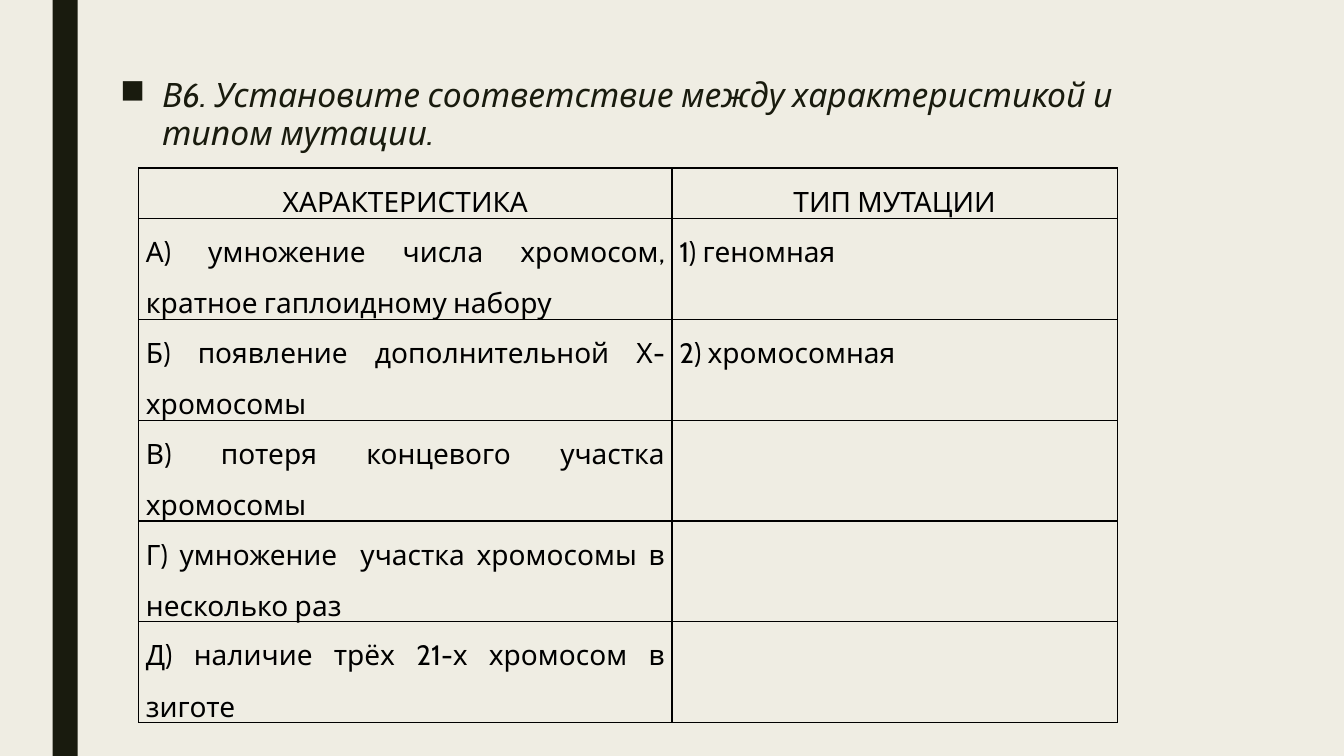
from dataclasses import dataclass

from lxml.etree import SubElement
from pptx import Presentation
from pptx.dml.color import RGBColor as RGB
from pptx.enum.shapes import MSO_SHAPE as SHAPE
from pptx.enum.text import PP_ALIGN as ALIGN
from pptx.oxml.ns import qn
from pptx.util import Pt

EMU_PER_PX = 9525


@dataclass(frozen=True)
class Theme:
    font: str = "Cabin"
    background: str = "EFEDE3"
    dark: str = "191B0E"
    black: str = "000000"
    task_size: int = 24
    table_size: int = 20
    border: int = 1


THEME = Theme()

TASK = "В6. Установите соответствие между характеристикой и типом мутации."
ROWS = [
    ("ХАРАКТЕРИСТИКА", "ТИП МУТАЦИИ"),
    ("А) умножение числа хромосом, кратное гаплоидному набору", "1) геномная"),
    ("Б) появление дополнительной Х-хромосомы", "2) хромосомная"),
    ("В) потеря концевого участка хромосомы", ""),
    ("Г) умножение  участка хромосомы в несколько раз", ""),
    ("Д) наличие трёх 21-х хромосом в зиготе", ""),
]
COLUMN_WIDTHS = [508, 424]
ROW_HEIGHTS = [41, 88, 88, 88, 88, 96]


def px(n):
    return n * EMU_PER_PX


def box_px(box):
    return [px(n) for n in box]


def write(tf, text, size, color, align=ALIGN.LEFT, spacing=1.0, after=0,
          italic=False, bullet=None, indent=0):
    p = tf.paragraphs[0]
    p.alignment, p.line_spacing, p.space_after = align, spacing, Pt(after)
    p.space_before = Pt(0)
    if bullet:
        pPr = p._p.get_or_add_pPr()
        pPr.set("marL", str(px(indent)))
        pPr.set("indent", str(-px(indent)))
        SubElement(pPr, qn("a:buChar")).set("char", bullet)
    r = p.add_run()
    r.text = text
    f = r.font
    f.name, f.size, f.bold, f.italic = THEME.font, Pt(size), False, italic
    f.color.rgb = RGB.from_string(color)


def set_borders(cell, color, width):
    tcPr = cell._tc.get_or_add_tcPr()
    for side in ("lnL", "lnR", "lnT", "lnB"):
        ln = SubElement(tcPr, qn(f"a:{side}"), w=str(Pt(width)))
        SubElement(SubElement(ln, qn("a:solidFill")), qn("a:srgbClr")).set("val", color)


def add_side_bar(s, box):
    sp = s.shapes.add_shape(SHAPE.RECTANGLE, *box_px(box))
    sp.shadow.inherit = False
    sp.fill.solid()
    sp.fill.fore_color.rgb = RGB.from_string(THEME.dark)
    sp.line.fill.background()


def add_task(s, box):
    tf = s.shapes.add_textbox(*box_px(box)).text_frame
    tf.word_wrap = True
    write(tf, TASK, THEME.task_size, THEME.dark, spacing=0.94, after=2,
          italic=True, bullet="■", indent=40)


def add_mutation_table(s, left, top):
    box = (left, top, sum(COLUMN_WIDTHS), sum(ROW_HEIGHTS))
    table = s.shapes.add_table(len(ROWS), len(COLUMN_WIDTHS), *box_px(box)).table
    table.first_row = table.horz_banding = False
    for column, width in zip(table.columns, COLUMN_WIDTHS):
        column.width = px(width)
    for i, (row, height, texts) in enumerate(zip(table.rows, ROW_HEIGHTS, ROWS)):
        row.height = px(height)
        for cell, text in zip(row.cells, texts):
            cell.margin_left = cell.margin_right = px(7)
            cell.margin_top = cell.margin_bottom = 0
            set_borders(cell, THEME.black, THEME.border)
            cell.fill.background()
            if text:
                write(cell.text_frame, text, THEME.table_size, THEME.black,
                      align=ALIGN.JUSTIFY if i else ALIGN.CENTER,
                      spacing=1.5, after=10)


def build_slide(prs):
    s = prs.slides.add_slide(prs.slide_layouts[6])
    s.background.fill.solid()
    s.background.fill.fore_color.rgb = RGB.from_string(THEME.background)
    add_side_bar(s, (50, 0, 24, 720))
    add_task(s, (105, 69, 1017, 88))
    add_mutation_table(s, 132, 160)


def main():
    prs = Presentation()
    prs.slide_width, prs.slide_height = px(1280), px(720)
    build_slide(prs)
    prs.save("out.pptx")


if __name__ == "__main__":
    main()
